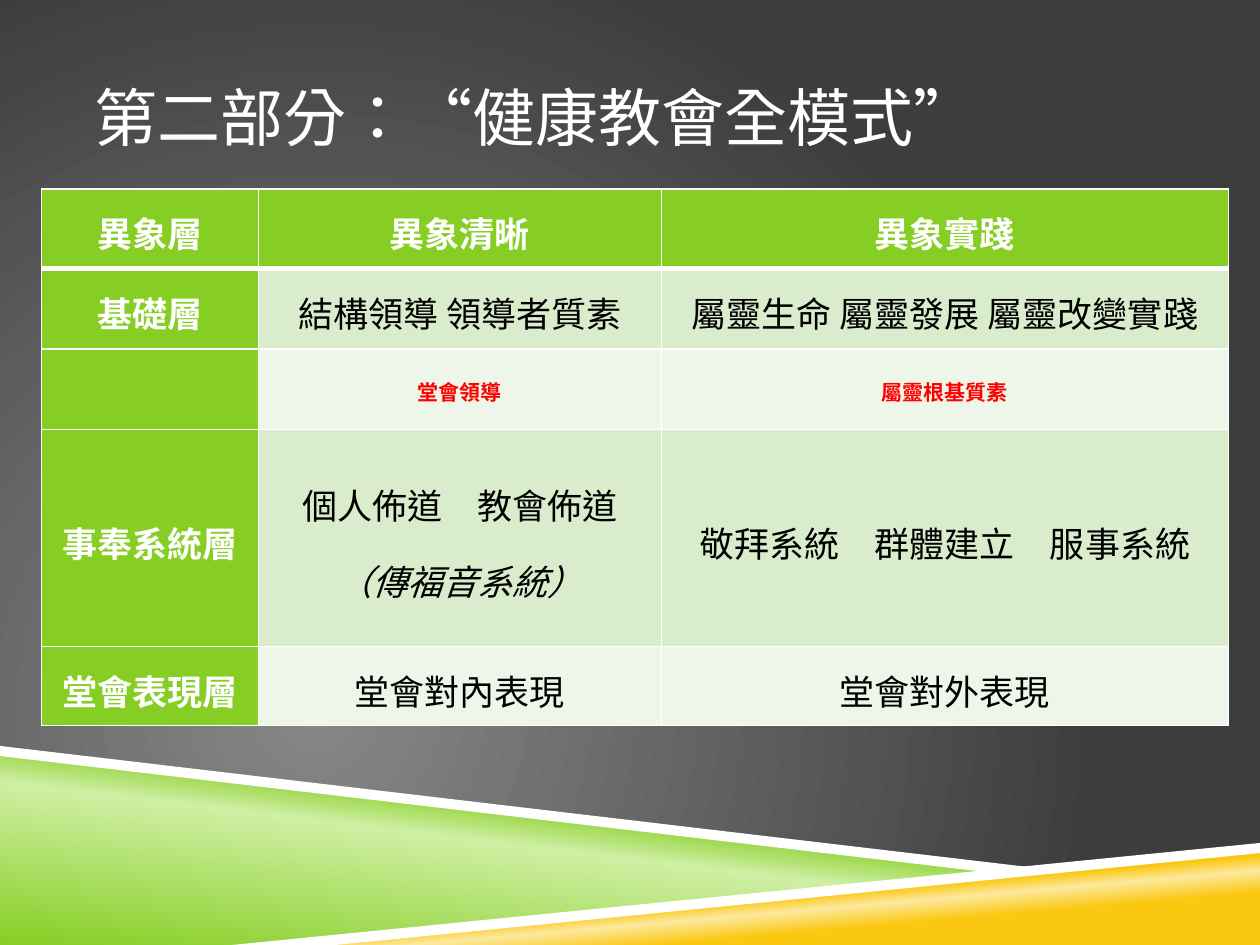
from lxml import etree
from pptx import Presentation
from pptx.dml.color import RGBColor
from pptx.enum.lang import MSO_LANGUAGE_ID as Language
from pptx.enum.text import MSO_ANCHOR as Anchor, PP_ALIGN as Align
from pptx.oxml import parse_xml
from pptx.oxml.ns import nsdecls, qn
from pptx.util import Inches, Pt

COLORS = {
    "white": "FFFFFF", "black": "000000", "red": "FF0000",
    "gray": "878787", "charcoal": "3D3D3D",
    "green": "86CE24", "pale_green": "CFEFA4",
    "gold": "FAC810", "pale_gold": "FDE99F",
    "band_dark": "D9EDCD", "band_light": "EDF6E8",
}
LATIN, CJK = "Calibri", "Noto Sans CJK SC"
COLUMNS = [1.72, 3.2, 4.5]
ROW_HEIGHTS = [0.63, 0.64, 0.64, 1.72, 0.63]
ROWS = [
    ["異象層", "異象清晰", "異象實踐"],
    ["基礎層", "結構領導 領導者質素", "屬靈生命 屬靈發展 屬靈改變實踐"],
    ["", "堂會領導", "屬靈根基質素"],
    ["事奉系統層", "個人佈道　教會佈道\n（傳福音系統）", "敬拜系統　群體建立　服事系統"],
    ["堂會表現層", "堂會對內表現", "堂會對外表現"],
]
HIGHLIGHT_ROW = 2


def rgb(name):
    return RGBColor.from_string(COLORS[name])


def set_gradient(fill_owner, parent, stops, direction):
    """Replace the gradient in parent; direction is the XML of its lin or path."""
    fill_owner.fill.gradient()
    stop_xml = "".join(
        f'<a:gs pos="{pos * 1000}"><a:srgbClr val="{COLORS[name]}"/></a:gs>'
        for pos, name in stops)
    gradient = parse_xml(f'<a:gradFill {nsdecls("a")} rotWithShape="1">'
                         f"<a:gsLst>{stop_xml}</a:gsLst>{direction}</a:gradFill>")
    old = next(parent.iter(qn("a:gradFill")))
    old.getparent().replace(old, gradient)


def write(frame, text, font=CJK, size=20, color="black", bold=False,
          italic_from=None, align=Align.LEFT, spacing=None, after=None):
    """Write one paragraph per line; lines from italic_from on are italic."""
    for index, line in enumerate(text.split("\n")):
        para = frame.paragraphs[0] if index == 0 else frame.add_paragraph()
        para.alignment = align
        if spacing:
            para.line_spacing = spacing
        if after:
            para.space_after = Pt(after)
        span = para.add_run()
        span.text = line
        span.font.name, span.font.size = font, Pt(size)
        span.font.bold = bold
        span.font.italic = italic_from is not None and index >= italic_from
        span.font.color.rgb = rgb(color)
        span.font.language_id = Language.TRADITIONAL_CHINESE
        latin = span.font._element.find(qn("a:latin"))
        east_asian = etree.Element(qn("a:ea"), typeface=CJK)
        latin.addnext(east_asian)


def add_polygon(page, points, color=None, stops=None, angle=0):
    start, *rest = [(Inches(x), Inches(y)) for x, y in points]
    builder = page.shapes.build_freeform(*start)
    builder.add_line_segments(rest, close=True)
    shape = builder.convert_to_shape()
    shape.shadow.inherit = False
    shape.line.fill.background()
    if stops:
        set_gradient(shape, shape._element.spPr, stops,
                     f'<a:lin ang="{angle * 60000}" scaled="0"/>')
    else:
        shape.fill.solid()
        shape.fill.fore_color.rgb = rgb(color)


def add_backdrop(page, width, height):
    background = page.background
    set_gradient(background, page._element, [(0, "gray"), (100, "charcoal")],
                 '<a:path path="circle"><a:fillToRect l="50000" t="100000" '
                 'r="100000" b="50000"/></a:path>')
    add_polygon(page, [(0, 5.97), (7.92, 6.92), (2, height), (0, height)], angle=277,
                stops=[(0, "green"), (52, "pale_green"), (66, "green")])
    add_polygon(page, [(1.98, height), (width, 6.72), (width, height)], angle=265,
                stops=[(28, "gold"), (40, "pale_gold"), (48, "gold")])
    add_polygon(page, [(0, 5.92), (0, 6), (7.9, 6.93), (8.32, 6.9)], "white")
    add_polygon(page, [(width, 6.69), (1.84, height), (2.66, height), (width, 6.77)],
                "white")


def add_title(page, left, top, width, height):
    box = page.shapes.add_textbox(*map(Inches, (left, top, width, height)))
    frame = box.text_frame
    frame.word_wrap = True
    frame.vertical_anchor = Anchor.MIDDLE
    frame.margin_left = frame.margin_right = 0
    write(frame, "第二部分：“健康教會全模式”", font=LATIN, size=36, color="white")


def set_borders(cell, **widths):
    properties = cell._tc.get_or_add_tcPr()
    for index, side in enumerate("LRTB"):
        line = parse_xml(
            f'<a:ln{side} {nsdecls("a")} w="{Pt(widths.get(side, 1))}"><a:solidFill>'
            f'<a:srgbClr val="{COLORS["white"]}"/></a:solidFill></a:ln{side}>')
        properties.insert(index, line)


def format_cell(cell, text, row, column):
    heading = row == 0 or column == 0
    highlight = row == HIGHLIGHT_ROW and not heading
    band = "band_dark" if row % 2 else "band_light"
    cell.fill.solid()
    cell.fill.fore_color.rgb = rgb("green" if heading else band)
    set_borders(cell, T=3 if row == 1 else 1, B=3 if row == 0 else 1)
    cell.vertical_anchor = Anchor.MIDDLE
    cell.margin_left = cell.margin_right = Inches(0.07)
    cell.margin_top = cell.margin_bottom = 0
    if text:
        color = "white" if heading else "red" if highlight else "black"
        write(cell.text_frame, text, size=12 if highlight else 20, color=color,
              bold=heading or highlight, italic_from=1,
              align=Align.CENTER, spacing=1.15, after=10)


def add_layers_table(page, left, top):
    frame = page.shapes.add_table(
        len(ROWS), len(COLUMNS), Inches(left), Inches(top),
        Inches(sum(COLUMNS)), Inches(sum(ROW_HEIGHTS)))
    table = frame.table
    table.first_col = True
    for column, width in zip(table.columns, COLUMNS):
        column.width = Inches(width)
    for row, height in zip(table.rows, ROW_HEIGHTS):
        row.height = Inches(height)
    for row, texts in enumerate(ROWS):
        for column, text in enumerate(texts):
            format_cell(table.cell(row, column), text, row, column)


def main():
    deck = Presentation()
    deck.slide_width, deck.slide_height = Inches(10), Inches(7.5)
    page = deck.slides.add_slide(deck.slide_layouts[6])
    add_backdrop(page, 10, 7.5)
    add_title(page, 0.75, 0.3, 8.5, 1.25)
    add_layers_table(page, 0.33, 1.5)
    deck.save("out.pptx")


if __name__ == "__main__":
    main()
